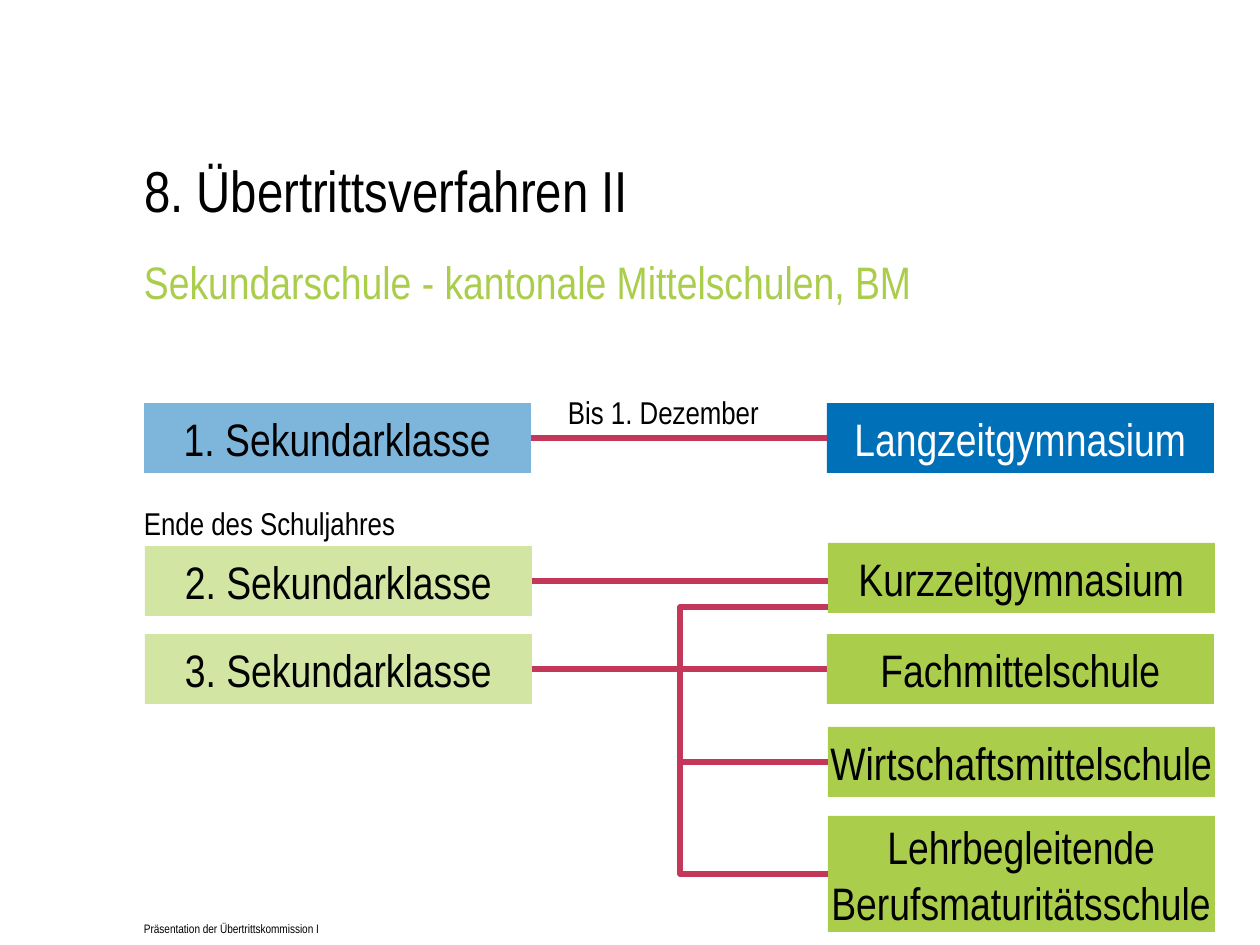
"""Build the slide on transfer from secondary school to the cantonal schools."""
from dataclasses import dataclass

from lxml import etree
from pptx import Presentation, util as u
from pptx.dml.color import RGBColor
from pptx.enum import shapes, text
from pptx.oxml import ns

PX = 914400 / 126
FONT = "Arial Narrow"
COLOURS = {
    "black": "000000",
    "white": "FFFFFF",
    "blue": "0070B8",
    "green": "AACD4B",
    "red": "C3375A",
}
BOX_WIDTH, BOX_HEIGHT = 387, 70
LEFT, RIGHT = 1, 3


@dataclass(frozen=True)
class Box:
    label: str
    left: int
    top: int
    fill: str
    colour: str = "black"
    height: int = BOX_HEIGHT
    opacity: int = 100

    @property
    def middle(self) -> int:
        return self.top + self.height // 2


@dataclass(frozen=True)
class Label:
    wording: str
    left: int
    top: int
    width: int
    height: int
    size: int
    colour: str = "black"
    line_spacing: int | None = None


FIRST = Box("1. Sekundarklasse", 144, 403, "blue", opacity=51)
SECOND = Box("2. Sekundarklasse", 145, 546, "green", opacity=51)
THIRD = Box("3. Sekundarklasse", 145, 634, "green", opacity=51)
LONG = Box("Langzeitgymnasium", 827, 403, "blue", "white")
SHORT = Box("Kurzzeitgymnasium", 828, 543, "green")
SPECIALISED = Box("Fachmittelschule", 827, 634, "green")
BUSINESS = Box("Wirtschaftsmittelschule", 828, 727, "green")
VOCATIONAL = Box("Lehrbegleitende Berufsmaturitätsschule", 828, 816, "green", height=116)
BOXES = [LONG, SHORT, SPECIALISED, BUSINESS, SECOND, VOCATIONAL, THIRD]

TITLE = Label("8. Übertrittsverfahren II", 144, 155, 1072, 89, 33)
LABELS = [
    Label("Präsentation der Übertrittskommission I", 144, 921, 645, 20, 7),
    Label("Sekundarschule - kantonale Mittelschulen, BM", 144, 253, 1071, 60, 26, "green", 32),
    Label("Bis 1. Dezember", 568, 393, 242, 38, 18),
    Label("Ende des Schuljahres", 144, 504, 328, 38, 18),
]
LINKS = [
    (FIRST, LONG, LONG.middle),
    (SECOND, SHORT, SECOND.middle),
    (THIRD, SPECIALISED, SPECIALISED.middle),
    (THIRD, SHORT, 607),
    (THIRD, BUSINESS, BUSINESS.middle),
    (THIRD, VOCATIONAL, VOCATIONAL.middle),
]


def px(length: int) -> int:
    return round(length * PX)


def colour(name: str) -> RGBColor:
    return RGBColor.from_string(COLOURS[name])


def place(shape, left: int, top: int, width: int, height: int) -> None:
    shape.left, shape.top = px(left), px(top)
    shape.width, shape.height = px(width), px(height)


def write(shape, wording: str, size: int, colour_name: str, align, anchor,
          line_spacing: int | None = None) -> None:
    frame = shape.text_frame
    frame.word_wrap = True
    frame.auto_size = text.MSO_AUTO_SIZE.NONE
    frame.vertical_anchor = anchor
    frame.margin_left = frame.margin_right = frame.margin_top = frame.margin_bottom = 0
    paragraph = frame.paragraphs[0]
    properties = paragraph._p.get_or_add_pPr()
    properties.set("marL", "0")
    properties.set("indent", "0")
    etree.SubElement(properties, ns.qn("a:buNone"))
    paragraph.alignment = align
    paragraph.space_before = u.Pt(0)
    if line_spacing:
        paragraph.line_spacing = u.Pt(line_spacing)
    run = paragraph.add_run()
    run.text = wording
    run.font.name = FONT
    run.font.size = u.Pt(size)
    run.font.color.rgb = colour(colour_name)


def write_label(shape, label: Label) -> None:
    place(shape, label.left, label.top, label.width, label.height)
    write(shape, label.wording, label.size, label.colour, text.PP_ALIGN.LEFT,
          text.MSO_ANCHOR.TOP, label.line_spacing)


def format_box(shape, box: Box) -> None:
    place(shape, box.left, box.top, BOX_WIDTH, box.height)
    shape.fill.solid()
    shape.fill.fore_color.rgb = colour(box.fill)
    if box.opacity < 100:
        tint = shape._element.spPr.find(".//" + ns.qn("a:srgbClr"))
        etree.SubElement(tint, ns.qn("a:alpha"), val=str(box.opacity * 1000))
    shape.line.fill.background()
    write(shape, box.label, 26, box.colour, text.PP_ALIGN.CENTER,
          text.MSO_ANCHOR.MIDDLE, 32)


def draw_box(slide, box: Box):
    shape = slide.shapes.add_shape(shapes.MSO_SHAPE.RECTANGLE, 0, 0, 0, 0)
    shape.shadow.inherit = False
    format_box(shape, box)
    return shape


def draw_link(slide, drawn: dict, start: Box, end: Box, end_y: int) -> None:
    kind = (shapes.MSO_CONNECTOR.STRAIGHT if start.middle == end_y
            else shapes.MSO_CONNECTOR.ELBOW)
    connector = slide.shapes.add_connector(
        kind, px(start.left + BOX_WIDTH), px(start.middle), px(end.left), px(end_y))
    connector.begin_connect(drawn[start], RIGHT)
    if end_y == end.middle:
        connector.end_connect(drawn[end], LEFT)
    connector.line.color.rgb = colour("red")
    connector.line.width = u.Pt(3)
    etree.SubElement(connector._element.spPr, ns.qn("a:effectLst"))


def main() -> None:
    presentation = Presentation()
    presentation.slide_width, presentation.slide_height = u.Inches(10), u.Inches(7.5)
    slide = presentation.slides.add_slide(presentation.slide_layouts[1])
    write_label(slide.shapes.title, TITLE)
    body = slide.placeholders[1]
    format_box(body, FIRST)
    drawn = {FIRST: body}
    for box in BOXES:
        drawn[box] = draw_box(slide, box)
    for start, end, end_y in LINKS:
        draw_link(slide, drawn, start, end, end_y)
    for label in LABELS:
        write_label(slide.shapes.add_textbox(0, 0, 0, 0), label)
    presentation.save("out.pptx")


if __name__ == "__main__":
    main()
